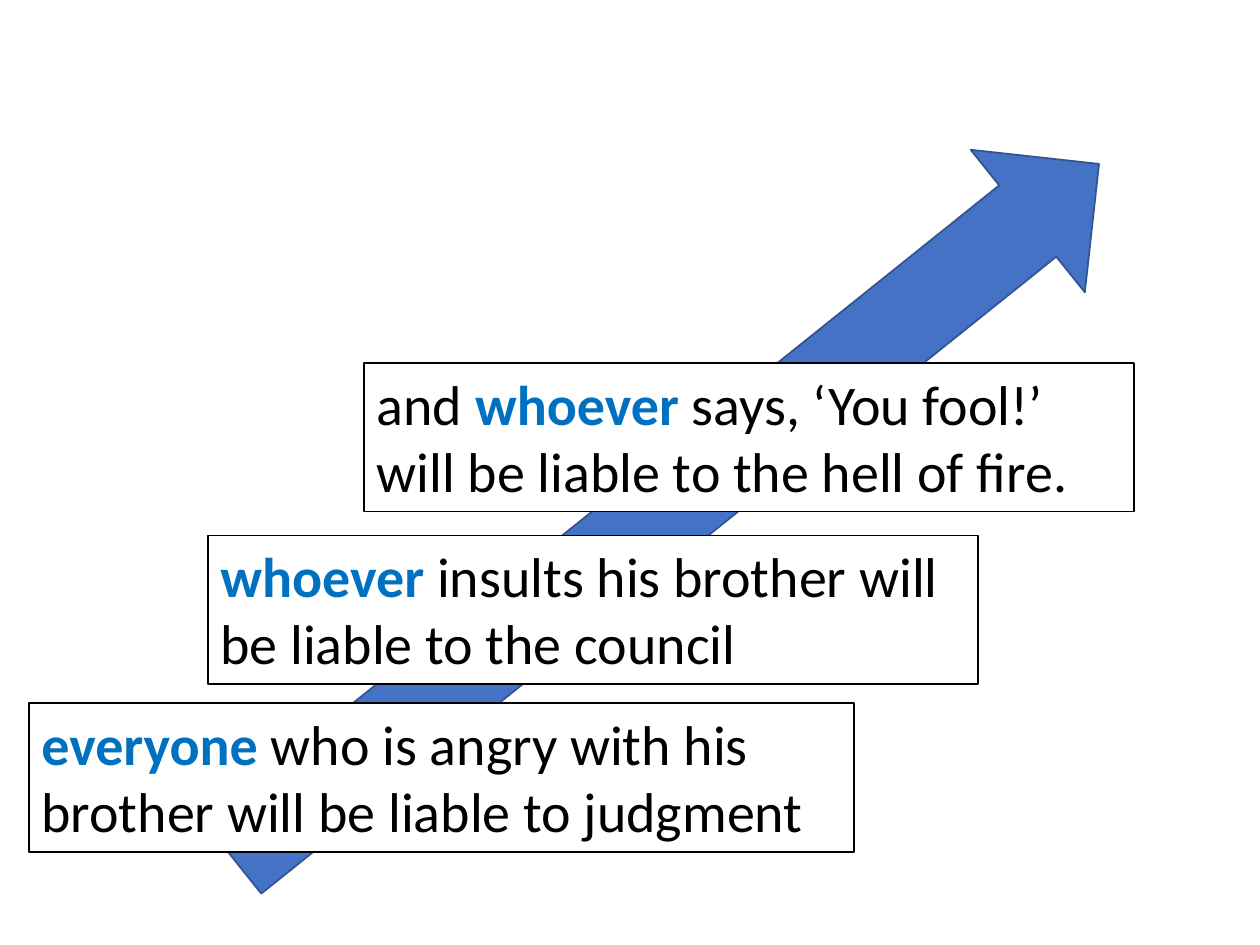
from pptx import Presentation
from pptx.dml.color import RGBColor
from pptx.enum.shapes import MSO_SHAPE
from pptx.enum.text import MSO_ANCHOR, MSO_AUTO_SIZE, PP_ALIGN
from pptx.util import Inches, Pt

COLORS = {"arrow": "4472C4", "arrow edge": "325491", "paper": "FFFFFF",
          "ink": "000000", "accent": "0070C0"}

deck = Presentation()
deck.slide_width, deck.slide_height = Inches(10), Inches(7.5)
page = deck.slides.add_slide(deck.slide_layouts[6])


def color(name):
    return RGBColor.from_string(COLORS[name])


def add_block(kind, left, top, width, height, fill, edge):
    block = page.shapes.add_shape(
        kind, Inches(left), Inches(top), Inches(width), Inches(height))
    block.shadow.inherit = False
    block.fill.solid()
    block.fill.fore_color.rgb = color(fill)
    block.line.color.rgb = color(edge)
    block.line.width = Pt(1)
    return block


# Rising arrow behind the steps
arrow = add_block(MSO_SHAPE.RIGHT_ARROW, 0.88, 3.33, 8.81, 1.45,
                  "arrow", "arrow edge")
arrow.rotation = 321.3

# Steps from bottom to top: left, top, width, text before, key word, text after
steps = [
    (0.23, 5.58, 6.55, "", "everyone",
     " who is angry with his brother will be liable to judgment"),
    (1.65, 4.25, 6.11, "", "whoever",
     " insults his brother will be liable to the council"),
    (2.89, 2.88, 6.11, "and ", "whoever",
     " says, ‘You fool!’ will be liable to the hell of fire."),
]
frame_format = {"word_wrap": True, "vertical_anchor": MSO_ANCHOR.TOP,
                "auto_size": MSO_AUTO_SIZE.SHAPE_TO_FIT_TEXT}

for left, top, width, before, key_word, after in steps:
    box = add_block(MSO_SHAPE.RECTANGLE, left, top, width, 1.18,
                    "paper", "ink")
    for name, value in frame_format.items():
        setattr(box.text_frame, name, value)
    para = box.text_frame.paragraphs[0]
    para.alignment = PP_ALIGN.LEFT
    for text, is_key in ((before, False), (key_word, True), (after, False)):
        if not text:
            continue
        span = para.add_run()
        span.text = text
        font_format = {"name": "Calibri", "size": Pt(32), "bold": is_key}
        for name, value in font_format.items():
            setattr(span.font, name, value)
        span.font.color.rgb = color("accent" if is_key else "ink")

deck.save("out.pptx")
